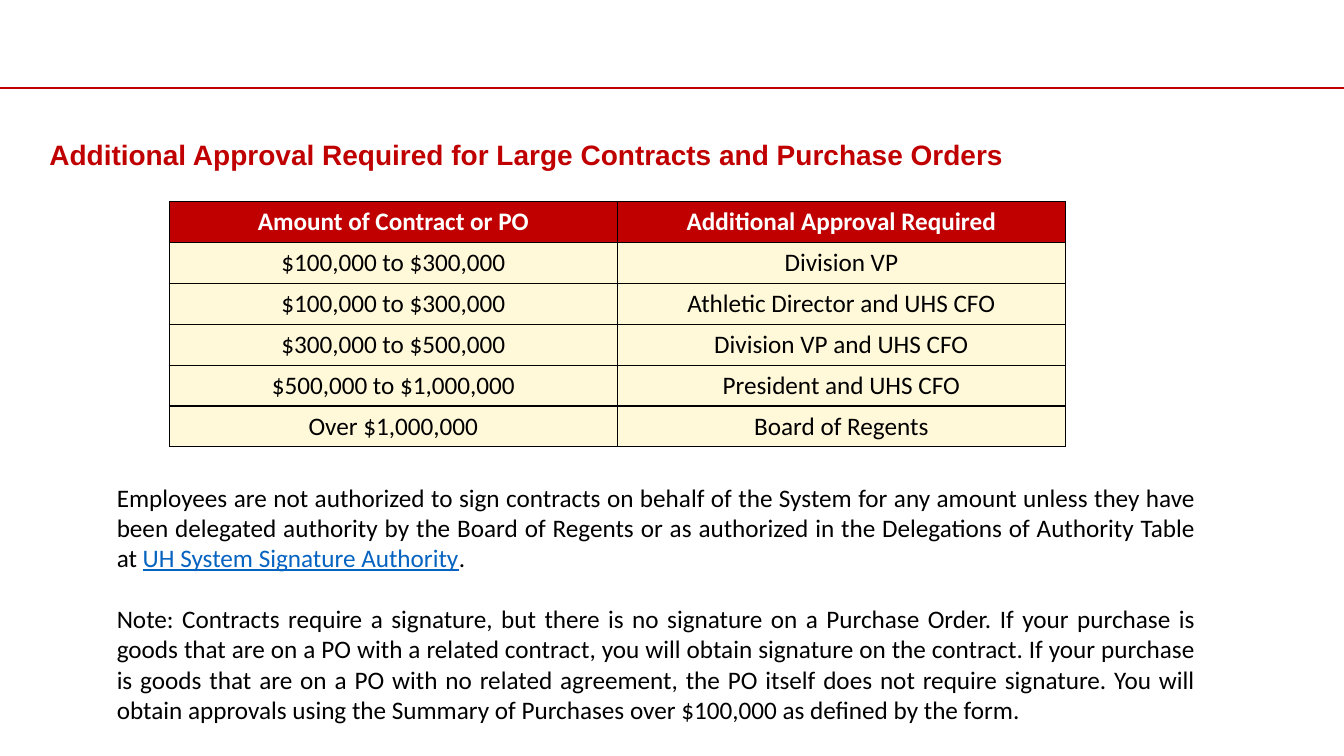
from typing import NamedTuple

from lxml import etree
from pptx import Presentation
from pptx.dml.color import RGBColor
from pptx.enum import shapes, text
from pptx.oxml import ns
from pptx.util import Pt

HUES = {"red": "C00000", "cream": "FFF9D9", "black": "000000",
        "white": "FFFFFF", "link": "0563C1"}


class Box(NamedTuple):
    left: float
    top: float
    width: float
    height: float


class Row(NamedTuple):
    amount: str
    signer: str


class Piece(NamedTuple):
    words: str
    hue: str = "black"
    under: bool = False


WIDE, HIGH = 960, 540
RULE = 62.6
TITLE = Box(28, 93, 904, 41)
GRID = Box(121, 144, 640, 175.2)
BODY = Box(76.3, 340.6, 785, 181.4)

ROWS = [
    Row("Amount of Contract or PO", "Additional Approval Required"),
    Row("$100,000 to $300,000", "Division VP"),
    Row("$100,000 to $300,000", "Athletic Director and UHS CFO"),
    Row("$300,000 to $500,000", "Division VP and UHS CFO"),
    Row("$500,000 to $1,000,000", "President and UHS CFO"),
    Row("Over $1,000,000", "Board of Regents"),
]

PARAS = [
    [Piece("Employees are not authorized to sign contracts on behalf of the "
           "System for any amount unless they have been delegated authority "
           "by the Board of Regents or as authorized in the Delegations of "
           "Authority Table at "),
     Piece("UH System Signature Authority", "link", True),
     Piece(".")],
    [Piece("Note: Contracts require a signature, but there is no signature on "
           "a Purchase Order. If your purchase is goods that are on a PO with "
           "a related contract, you will obtain signature on the contract. If "
           "your purchase is goods that are on a PO with no related agreement, "
           "the PO itself does not require signature. You will obtain "
           "approvals using the Summary of Purchases over $100,000 as defined "
           "by the form.")],
]


def place(box: Box) -> list[Pt]:
    return [Pt(side) for side in box]


def style(font, hue: str, size: float = 18, face: str = "Calibri",
          bold: bool = False) -> None:
    font.name, font.size, font.bold = face, Pt(size), bold
    font.color.rgb = RGBColor.from_string(HUES[hue])


def draw_rule(slide) -> None:
    line = slide.shapes.add_connector(
        shapes.MSO_CONNECTOR.STRAIGHT, 0, Pt(RULE), Pt(WIDE), Pt(RULE))
    line.line.color.rgb = RGBColor.from_string(HUES["red"])
    line.line.width = Pt(1.5)
    etree.SubElement(line._element.spPr, ns.qn("a:effectLst"))


def draw_title(slide) -> None:
    title = slide.shapes.title
    title.left, title.top, title.width, title.height = place(TITLE)
    frame = title.text_frame
    frame.text = "Additional Approval Required for Large Contracts and Purchase Orders"
    frame.vertical_anchor = text.MSO_ANCHOR.TOP
    frame.margin_top = Pt(5.5)
    para = frame.paragraphs[0]
    para.alignment = text.PP_ALIGN.LEFT
    style(para.runs[0].font, "red", 20, "Arial", True)


def edge(cell) -> None:
    props = cell._tc.get_or_add_tcPr()
    for spot, side in enumerate(("lnL", "lnR", "lnT", "lnB")):
        line = etree.Element(ns.qn(f"a:{side}"), w=str(Pt(1)))
        fill = etree.SubElement(line, ns.qn("a:solidFill"))
        etree.SubElement(fill, ns.qn("a:srgbClr"), val=HUES["black"])
        props.insert(spot, line)


def draw_table(slide) -> None:
    table = slide.shapes.add_table(len(ROWS), 2, *place(GRID)).table
    for y, row in enumerate(ROWS):
        table.rows[y].height = Pt(GRID.height / len(ROWS))
        head = y == 0
        for x, words in enumerate(row):
            cell = table.cell(y, x)
            cell.text = words
            cell.vertical_anchor = text.MSO_ANCHOR.MIDDLE
            cell.fill.solid()
            cell.fill.fore_color.rgb = RGBColor.from_string(
                HUES["red" if head else "cream"])
            para = cell.text_frame.paragraphs[0]
            para.alignment = text.PP_ALIGN.CENTER
            style(para.runs[0].font, "white" if head else "black", bold=head)
            edge(cell)


def draw_body(slide) -> None:
    frame = slide.shapes.add_textbox(*place(BODY)).text_frame
    frame.word_wrap = True
    for spot, pieces in enumerate(PARAS):
        para = frame.add_paragraph() if spot else frame.paragraphs[0]
        para.alignment = text.PP_ALIGN.JUSTIFY
        if spot:
            para.space_before = Pt(22)
        for piece in pieces:
            run = para.add_run()
            run.text = piece.words
            style(run.font, piece.hue)
            run.font.underline = piece.under


def main() -> None:
    deck = Presentation()
    deck.slide_width, deck.slide_height = Pt(WIDE), Pt(HIGH)
    slide = deck.slides.add_slide(deck.slide_layouts.get_by_name("Title Only"))
    draw_rule(slide)
    draw_title(slide)
    draw_table(slide)
    draw_body(slide)
    deck.save("out.pptx")


if __name__ == "__main__":
    main()
